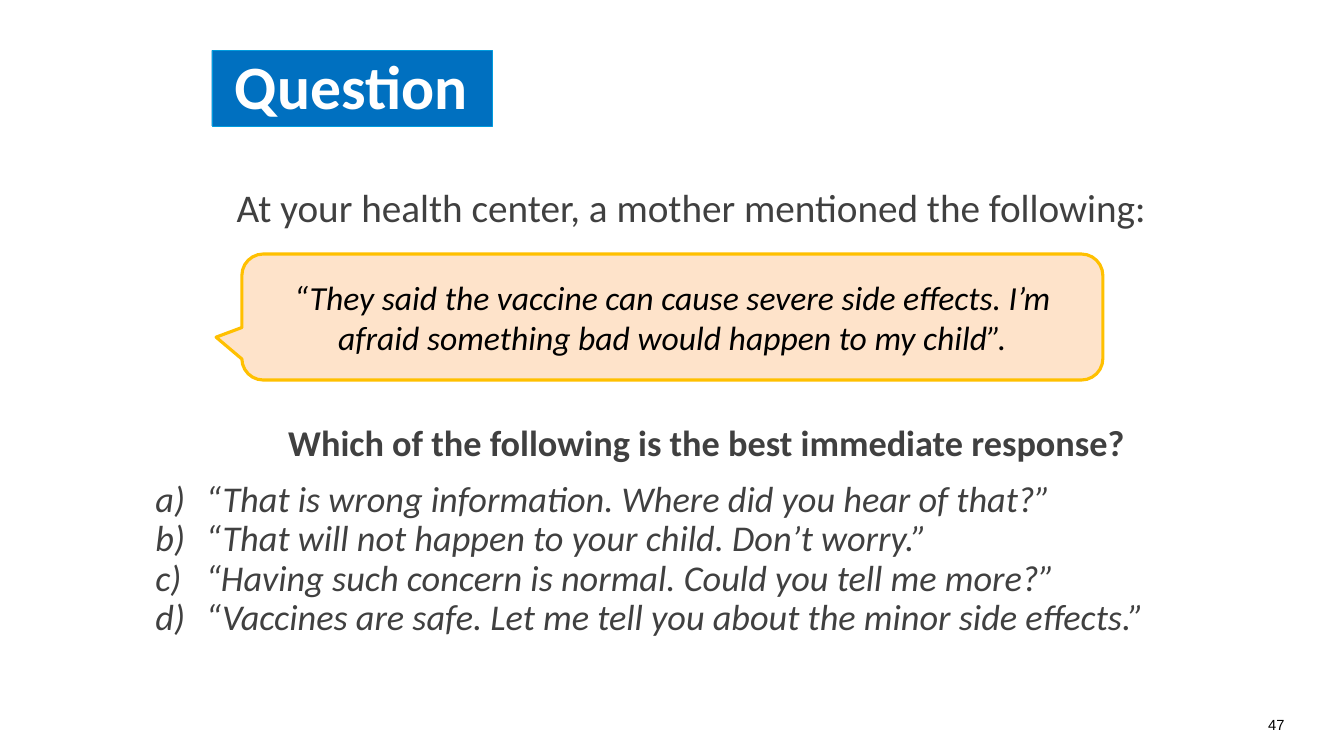
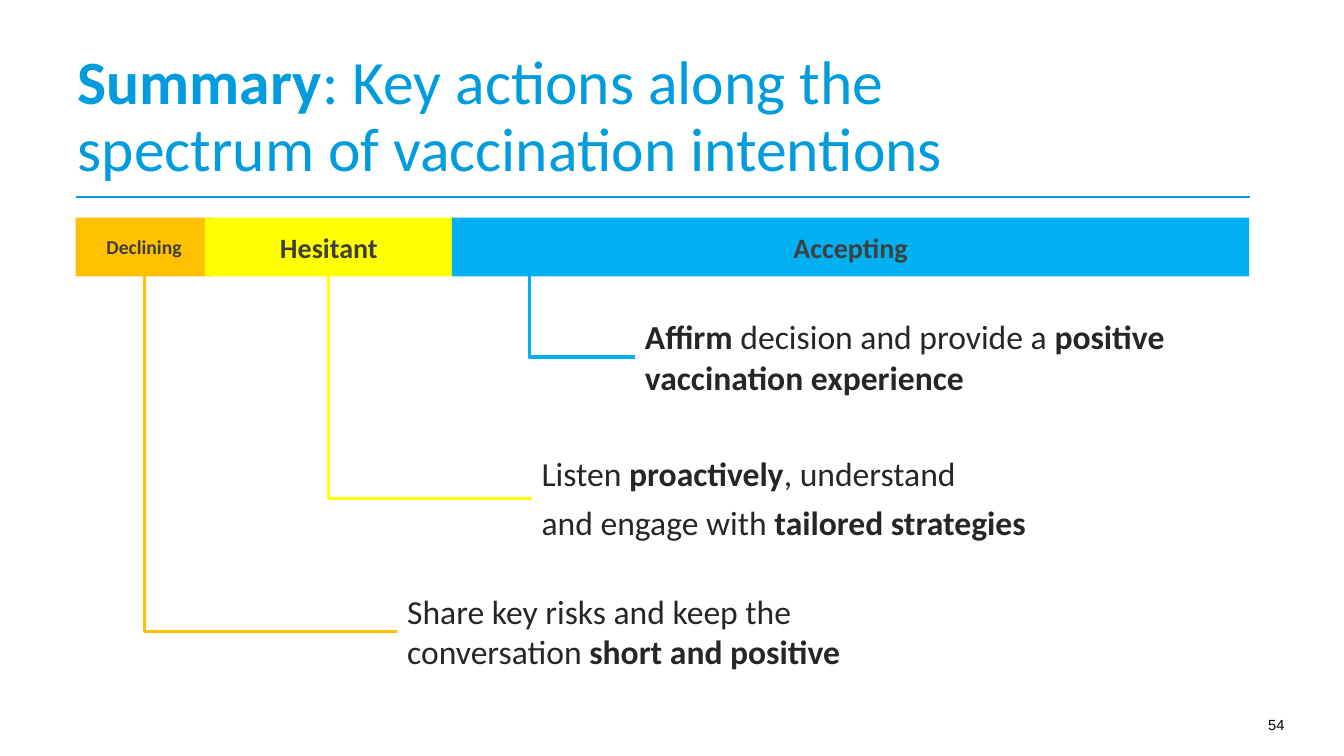
from dataclasses import dataclass

from lxml.etree import SubElement
from pptx import Presentation
from pptx.dml.color import RGBColor
from pptx.enum.shapes import MSO_CONNECTOR as Connector, MSO_SHAPE as Preset
from pptx.enum.text import MSO_ANCHOR as Anchor, MSO_AUTO_SIZE as AutoSize, PP_ALIGN as Align
from pptx.oxml.ns import qn
from pptx.util import Inches, Pt

COLORS = {
    "title": "009CDE", "banner": "0070C0", "white": "FFFFFF", "black": "000000",
    "body": "404040", "band": "3F3F3F", "action": "262626", "callout": "FEE3CA",
    "amber": "FFC000", "yellow": "FFFF00", "sky": "00B0F0",
}
COLUMNS, ROWS = 160, 90
WIDTH, HEIGHT = Inches(13.33), Inches(7.5)
TITLE_ONLY, TITLE_AND_BODY = 5, 1


def across(columns):
    """Turn grid columns into a length."""
    return round(columns * WIDTH / COLUMNS)


def down(rows):
    """Turn grid rows into a length."""
    return round(rows * HEIGHT / ROWS)


@dataclass
class Box:
    """Hold a region in grid columns and rows."""
    left: float
    top: float
    width: float
    height: float

    def inner(self, left, top, width, height):
        """Return a region placed relative to this one."""
        return Box(self.left + left, self.top + top, width, height)

    def lengths(self):
        """Return left, top, width and height as lengths."""
        return across(self.left), down(self.top), across(self.width), down(self.height)


def color(name):
    """Look up a colour of the palette."""
    return RGBColor.from_string(COLORS[name])


def prepare(frame, anchor=Anchor.TOP, insets=(0, 0, 0, 0)):
    """Set wrapping, anchor and insets in inches of a text frame."""
    frame.word_wrap = True
    frame.auto_size = AutoSize.NONE
    frame.vertical_anchor = anchor
    frame.margin_left, frame.margin_top, frame.margin_right, frame.margin_bottom = map(Inches, insets)
    return frame


def write(frame, text, size=24, ink="action", font="Calibri", align=Align.LEFT, bold=False,
          italic=False, spacing=1.0, before=0, after=0, lettered=False):
    """Add a paragraph in which double asterisks switch bold on and off."""
    paragraph = frame.add_paragraph() if frame.text else frame.paragraphs[0]
    properties = paragraph._p.get_or_add_pPr()
    indent = Inches(0.5) if lettered else 0
    properties.set("marL", str(indent))
    properties.set("indent", str(-indent))
    if lettered:
        SubElement(properties, qn("a:buFont")).set("typeface", "+mj-lt")
        SubElement(properties, qn("a:buAutoNum")).set("type", "alphaLcParenR")
    else:
        SubElement(properties, qn("a:buNone"))
    paragraph.alignment = align
    paragraph.line_spacing = spacing
    paragraph.space_before, paragraph.space_after = Pt(before), Pt(after)
    for index, piece in enumerate(text.split("**")):
        if piece:
            run = paragraph.add_run()
            run.text = piece
            run.font.name, run.font.size = font, Pt(size)
            run.font.bold, run.font.italic = bold or index % 2 == 1, italic
            run.font.color.rgb = color(ink)


def add_label(slide, box, **insets):
    """Add an empty text box ready for writing."""
    return prepare(slide.shapes.add_textbox(*box.lengths()).text_frame, **insets)


def add_panel(slide, preset, box, fill, line=None):
    """Add a filled shape with centred text and an optional outline."""
    shape = slide.shapes.add_shape(preset, *box.lengths())
    shape.shadow.inherit = False
    shape.fill.solid()
    shape.fill.fore_color.rgb = color(fill)
    if line:
        shape.line.color.rgb, shape.line.width = color(line), Pt(2.25)
    else:
        shape.line.fill.background()
    prepare(shape.text_frame, Anchor.MIDDLE, (0.1, 0.05, 0.1, 0.05))
    return shape


def add_line(slide, kind, start, end, ink, width):
    """Add a straight or elbow line; an elbow goes down first."""
    points = across(start[0]), down(start[1]), across(end[0]), down(end[1])
    line = slide.shapes.add_connector(kind, *points)
    line.line.color.rgb, line.line.width = color(ink), Pt(width)
    properties = line._element.spPr
    if kind == Connector.ELBOW:
        guides = properties.find(qn("a:prstGeom")).get_or_add_avLst()
        guide = SubElement(guides, qn("a:gd"))
        guide.set("name", "adj1")
        guide.set("fmla", "val 0")
    SubElement(properties, qn("a:effectLst"))


def place(placeholder, box):
    """Move a placeholder to a box."""
    placeholder.left, placeholder.top, placeholder.width, placeholder.height = box.lengths()


def set_title(slide, box, text, ink, insets, bold=False):
    """Place and write the slide title."""
    title = slide.shapes.title
    place(title, box)
    prepare(title.text_frame, Anchor.BOTTOM, insets)
    write(title.text_frame, text, size=44, ink=ink, bold=bold, spacing=0.9)
    return title


def start_slide(presentation, layout, number):
    """Add a slide with its page number."""
    slide = presentation.slides.add_slide(presentation.slide_layouts[layout])
    frame = add_label(slide, Box(143.4, 84.6, 10.7, 3.5), insets=(0.1, 0.05, 0.1, 0.05))
    write(frame, str(number), size=10.5, ink="black", font="Arial", align=Align.RIGHT)
    return slide


def add_choices(slide, box, question, answers):
    """Fill the body with a question and its lettered answers."""
    body = slide.placeholders[1]
    place(body, box)
    frame = prepare(body.text_frame)
    style = {"size": 25.9, "ink": "body", "spacing": 0.9}
    write(frame, question, bold=True, align=Align.CENTER, after=12, **style)
    for answer in answers:
        write(frame, answer, italic=True, lettered=True, **style)


def add_quote(slide, box, text):
    """Add a speech callout pointing to the left."""
    callout = add_panel(slide, Preset.ROUNDED_RECTANGULAR_CALLOUT, box, "callout", "amber")
    for index, value in enumerate((-0.53, 0.16, 0.17)):
        callout.adjustments[index] = value
    write(callout.text_frame, text, ink="black", italic=True, align=Align.CENTER)


def add_spectrum(slide, box, bands):
    """Draw the coloured bands of the spectrum."""
    for text, left, width, fill, size in bands:
        band = add_panel(slide, Preset.RECTANGLE, box.inner(left, 0, width, box.height), fill)
        write(band.text_frame, text, size=size, ink="band", bold=True, align=Align.CENTER)


def add_actions(slide, box, actions):
    """Join each band to an action text centred on the end of its line."""
    for ink, start, end, row, width, height, lines in actions:
        corner, target = box.left + start, (box.left + end, box.top + row)
        add_line(slide, Connector.ELBOW, (corner, box.top), target, ink, 2.25)
        frame = add_label(slide, box.inner(end, row - height / 2, width, height),
                          insets=(0.1, 0.05, 0.1, 0.05))
        for index, line in enumerate(lines):
            write(frame, line, before=6 if index else 0)


def build_question(presentation):
    """Build the question slide."""
    slide = start_slide(presentation, TITLE_AND_BODY, 47)
    title = set_title(slide, Box(25.2, 6, 33.4, 9), "Question", "white", (0.23, 0, 0, 0.03), bold=True)
    title.fill.solid()
    title.fill.fore_color.rgb = color("banner")
    title.line.color.rgb, title.line.width = color("title"), Pt(0.25)
    prompt = add_label(slide, Box(14.9, 21.84, 134.8, 6))
    write(prompt, "At your health center, a mother mentioned the following:",
          size=28, ink="body", align=Align.CENTER)
    add_quote(slide, Box(28.8, 30.24, 102.5, 15),
              "“They said the vaccine can cause severe side effects. "
              "I’m afraid something bad would happen to my child”.")
    add_choices(slide, Box(18.5, 50.64, 131.3, 27.4),
                "Which of the following is the best immediate response?", (
                    "“That is wrong information. Where did you hear of that?”",
                    "“That will not happen to your child. Don’t worry.”",
                    "“Having such concern is normal. Could you tell me more?”",
                    "“Vaccines are safe. Let me tell you about the minor side effects.”"))


def build_summary(presentation):
    """Build the summary slide."""
    slide = start_slide(presentation, TITLE_ONLY, 54)
    content = Box(9, 6, 139.8, 78)
    set_title(slide, content.inner(0, 0, 125.3, 15.96),
              "**Summary**: Key actions along the spectrum of vaccination intentions",
              "title", (0.02, 0, 0.39, 0))
    rule = content.top + 17.5
    add_line(slide, Connector.STRAIGHT, (content.left, rule),
             (content.left + content.width, rule), "title", 1.5)
    add_spectrum(slide, content.inner(0, 19.9, content.width, 7), (
        ("Declining", 0, 16.3, "amber", 14),
        ("Hesitant", 15.4, 29.5, "yellow", 20),
        ("Accepting", 44.8, 94.9, "sky", 20)))
    add_actions(slide, content.inner(0, 26.9, content.width, 51), (
        ("yellow", 30.1, 54.3, 26.4, 70, 11.9,
         ("Listen **proactively**, understand", "and engage with **tailored strategies**")),
        ("amber", 8.2, 38.3, 42.3, 60.8, 10.9,
         ("Share key risks and keep the conversation **short and positive**",)),
        ("sky", 54, 66.6, 9.6, 70, 10.9,
         ("**Affirm** decision and provide a **positive vaccination experience**",))))


def main():
    """Build and save the presentation."""
    presentation = Presentation()
    presentation.slide_width, presentation.slide_height = WIDTH, HEIGHT
    build_question(presentation)
    build_summary(presentation)
    presentation.save("out.pptx")


if __name__ == "__main__":
    main()
